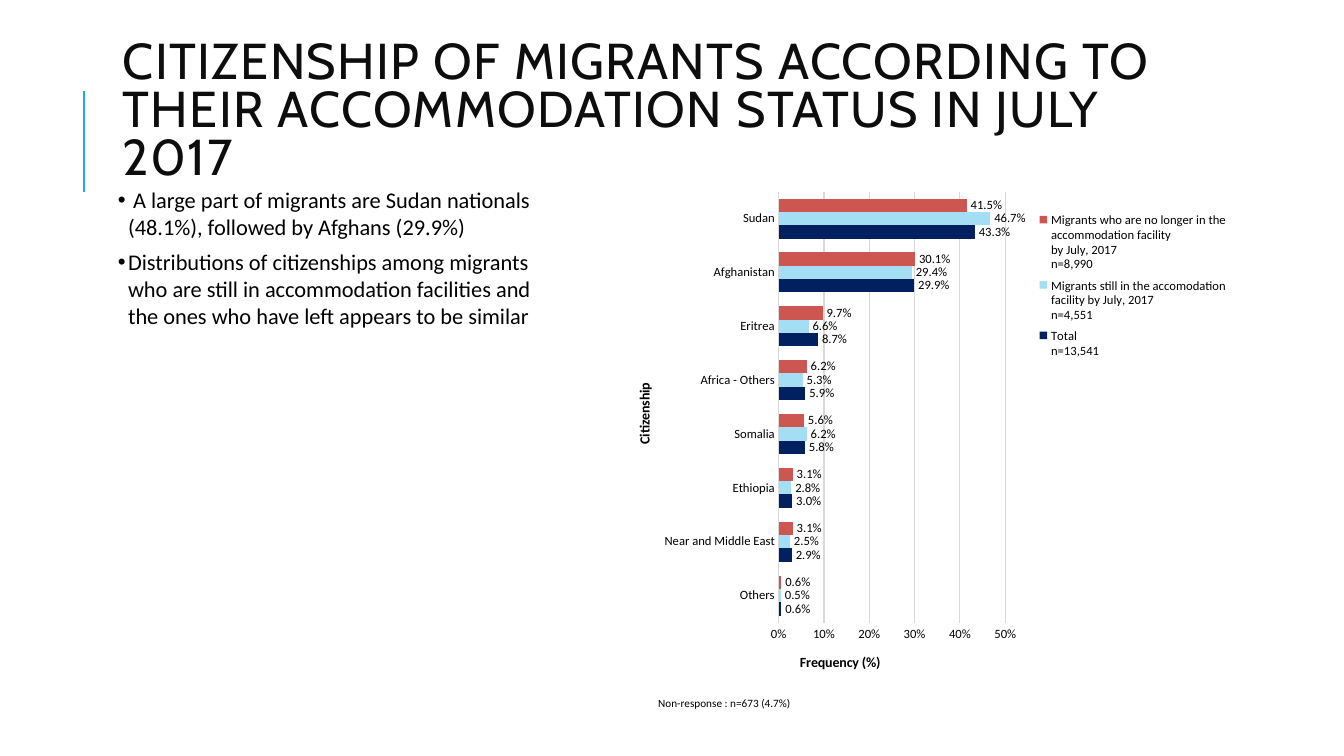
import pptx
import pptx.chart.data
import pptx.dml.color
import pptx.enum.chart
import pptx.enum.shapes
import pptx.enum.text
import pptx.oxml
import pptx.oxml.ns
import pptx.util
from lxml import etree

RGB = pptx.dml.color.RGBColor
BLACK = RGB(0x00, 0x00, 0x00)
INK = RGB(0x0D, 0x0D, 0x0D)
GRID = RGB(0xD9, 0xD9, 0xD9)
ACCENT = RGB(0x1C, 0xAD, 0xE4)
NAVY = RGB(0x00, 0x20, 0x60)
SKY = RGB(0xA4, 0xDE, 0xF4)
RED = RGB(0xCE, 0x56, 0x50)

Pt, Inches = pptx.util.Pt, pptx.util.Inches
qn = pptx.oxml.ns.qn

TITLE = "CITIZENSHIP OF MIGRANTS ACCORDING TO THEIR ACCOMMODATION STATUS IN JULY 2017"
POINTS = [
    " A large part of migrants are Sudan nationals (48.1%), followed by Afghans (29.9%)",
    "Distributions of citizenships among migrants who are still in accommodation "
    "facilities and the ones who have left appears to be similar",
]
COUNTRIES = ["Others", "Near and Middle East", "Ethiopia", "Somalia",
             "Africa - Others", "Eritrea", "Afghanistan", "Sudan"]
GROUPS = [
    ("Total\nn=13,541", NAVY,
     [0.006, 0.029, 0.03, 0.058, 0.059, 0.087, 0.299, 0.433]),
    ("Migrants still in the accomodation facility by July, 2017\nn=4,551", SKY,
     [0.005, 0.025, 0.028, 0.062, 0.053, 0.066, 0.294, 0.467]),
    ("Migrants who are no longer in the accommodation facility\nby July, 2017\nn=8,990", RED,
     [0.006, 0.031, 0.031, 0.056, 0.062, 0.097, 0.301, 0.415]),
]


def set_font(font, size, color=BLACK, name="Calibri", bold=False):
    font.size, font.name, font.bold = Pt(size), name, bold
    font.color.rgb = color


def add_text_frame(s, box, anchor=pptx.enum.text.MSO_ANCHOR.TOP):
    tf = s.shapes.add_textbox(*map(Inches, box)).text_frame
    tf.word_wrap = True
    tf.vertical_anchor = anchor
    return tf


def add_run(p, text, size, color=BLACK, name="Calibri"):
    r = p.add_run()
    r.text = text
    set_font(r.font, size, color, name)
    return r


def add_title(s):
    tf = add_text_frame(s, (1.12, 0.64, 10.84, 0.96), pptx.enum.text.MSO_ANCHOR.MIDDLE)
    p = tf.paragraphs[0]
    p.line_spacing = 0.8
    r = add_run(p, TITLE, 36, INK, "Cabin")
    r.font._element.set("spc", "100")


def add_bullets(s):
    tf = add_text_frame(s, (1.12, 1.8, 4.42, 5.26))
    tf.margin_left = tf.margin_right = tf.margin_top = tf.margin_bottom = Inches(0.05)
    for i, text in enumerate(POINTS):
        p = tf.add_paragraph() if i else tf.paragraphs[0]
        p.space_after = Pt(6)
        pPr = p._p.get_or_add_pPr()
        pPr.set("marL", str(Inches(0.1)))
        pPr.set("indent", str(Inches(-0.1)))
        etree.SubElement(pPr, qn("a:buFont")).set("typeface", "Arial")
        etree.SubElement(pPr, qn("a:buChar")).set("char", "•")
        add_run(p, text, 16)


def add_accent_line(s):
    line = s.shapes.add_connector(pptx.enum.shapes.MSO_CONNECTOR.STRAIGHT,
                                  *map(Inches, (0.83, 1.9, 0.83, 0.9)))
    line.line.color.rgb = ACCENT
    line.line.width = Pt(1.5)
    etree.SubElement(line._element.spPr, qn("a:effectLst"))


def place(parent, index, inner=False, **shares):
    """Fix a chart part's place, in shares of the chart, as child number index."""
    for old in parent.findall(qn("c:layout")):
        parent.remove(old)
    layout = etree.Element(qn("c:layout"))
    manual = etree.SubElement(layout, qn("c:manualLayout"))
    if inner:
        etree.SubElement(manual, qn("c:layoutTarget")).set("val", "inner")
    for side in "xy":
        etree.SubElement(manual, qn(f"c:{side}Mode")).set("val", "edge")
    for side, share in shares.items():
        etree.SubElement(manual, qn(f"c:{side}")).set("val", str(share))
    parent.insert(index, layout)


def style_axis(axis, title, x, y):
    axis.major_tick_mark = axis.minor_tick_mark = pptx.enum.chart.XL_TICK_MARK.NONE
    set_font(axis.tick_labels.font, 9)
    tf = axis.axis_title.text_frame
    r = tf.paragraphs[0].add_run()
    r.text = title
    set_font(r.font, 10, bold=True)
    place(axis.axis_title._element, 1, x=x, y=y)
    return tf


def style_axes(chart):
    cat, val = chart.category_axis, chart.value_axis
    tf = style_axis(cat, "Citizenship", 0.035, 0.39)
    tf._txBody.bodyPr.set("rot", "-5400000")
    tf._txBody.bodyPr.set("vert", "horz")
    style_axis(val, "Frequency (%)", 0.3, 0.92)
    val.minimum_scale, val.maximum_scale, val.major_unit = 0, 0.5, 0.1
    val.tick_labels.number_format = "0%"
    val.tick_labels.number_format_is_linked = False
    val.format.line.fill.background()
    for line in (cat.format.line, val.major_gridlines.format.line):
        line.color.rgb = GRID
        line.width = Pt(0.75)


def style_series(series, color):
    series.format.fill.solid()
    series.format.fill.fore_color.rgb = color
    labels = series.data_labels
    labels.show_value = True
    labels.number_format = "0.0%"
    labels.number_format_is_linked = False
    labels.position = pptx.enum.chart.XL_LABEL_POSITION.OUTSIDE_END
    set_font(labels.font, 9)


def add_citizenship_chart(s):
    data = pptx.chart.data.CategoryChartData(number_format="0.0%")
    data.categories = COUNTRIES
    for name, _, values in GROUPS:
        data.add_series(name, values)
    chart = s.shapes.add_chart(pptx.enum.chart.XL_CHART_TYPE.BAR_CLUSTERED,
                               *map(Inches, (6.06, 1.8, 6.16, 5.06)), data).chart
    chart.has_title = False
    set_font(chart.font, 10)
    plot = chart.plots[0]
    plot.gap_width = 104
    plot.vary_by_categories = False
    for series, (_, color, _) in zip(plot.series, GROUPS):
        style_series(series, color)
    style_axes(chart)
    chart.has_legend = True
    legend = chart.legend
    legend.position = pptx.enum.chart.XL_LEGEND_POSITION.RIGHT
    legend.include_in_layout = False
    set_font(legend.font, 9)
    place(legend._element, 1, x=0.68, y=0.05, w=0.32, h=0.31)
    place(plot._element.getparent(), 0, inner=True, x=0.27, y=0.02, w=0.365, h=0.845)


def main():
    prs = pptx.Presentation()
    prs.slide_width, prs.slide_height = Inches(13.33), Inches(7.5)
    s = prs.slides.add_slide(prs.slide_layouts[6])
    add_accent_line(s)
    add_title(s)
    add_bullets(s)
    note = add_text_frame(s, (6.43, 6.86, 3.54, 0.54))
    add_run(note.paragraphs[0], "Non-response : n=673 (4.7%)", 8)
    add_citizenship_chart(s)
    prs.save("out.pptx")


if __name__ == "__main__":
    main()
